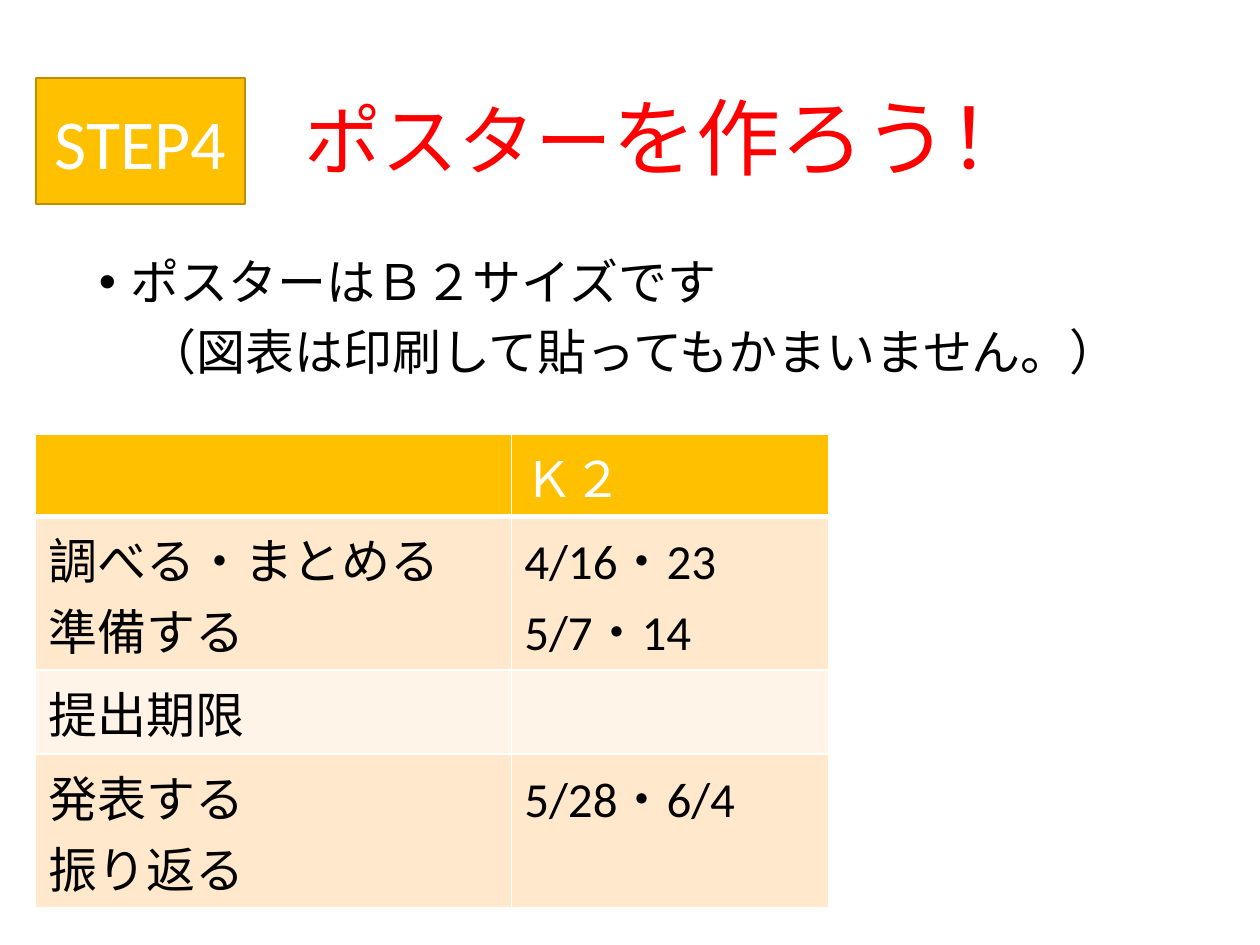
from lxml import etree
from pptx import Presentation
from pptx.dml.color import RGBColor
from pptx.enum.shapes import MSO_SHAPE
from pptx.enum.text import MSO_ANCHOR, PP_ALIGN
from pptx.oxml.ns import qn
from pptx.util import Pt

RECTANGLE = MSO_SHAPE.RECTANGLE
MIDDLE, TOP = MSO_ANCHOR.MIDDLE, MSO_ANCHOR.TOP
CENTER, LEFT = PP_ALIGN.CENTER, PP_ALIGN.LEFT
FONT = "Calibri"
COLORS = {
    "white": "FFFFFF", "black": "000000", "red": "FF0000", "gold": "FFC000",
    "gold_edge": "BD8E00", "band_dark": "FFE8CC", "band_light": "FFF4E7",
}
TITLE_FORMAT = {"alignment": CENTER, "line_spacing": 0.9}
BODY_FORMAT = {"alignment": LEFT, "line_spacing": 0.9, "space_before": Pt(10)}
SCHEDULE = [
    ("gold", "white", 47, ["", "Ｋ２"]),
    ("band_dark", "black", 88, ["調べる・まとめる\n準備する", "4/16・23\n5/7・14"]),
    ("band_light", "black", 48, ["提出期限", ""]),
    ("band_dark", "black", 88, ["発表する\n振り返る", "5/28・6/4"]),
]
COLUMN_WIDTHS = [272, 181]


def color(name):
    """Return the named colour."""
    return RGBColor.from_string(COLORS[name])


def set_attributes(target, values):
    """Set each attribute of target from a dict."""
    for name, value in values.items():
        setattr(target, name, value)


def paint(target, name):
    """Give a shape or cell a solid fill."""
    target.fill.solid()
    target.fill.fore_color.rgb = color(name)


def write_paragraphs(frame, paragraphs, values):
    """Write paragraphs, each a list of (text, size, colour) runs."""
    for index, runs in enumerate(paragraphs):
        paragraph = frame.add_paragraph() if index else frame.paragraphs[0]
        set_attributes(paragraph, values)
        for text, size, color_name in runs:
            run = paragraph.add_run()
            run.text = text
            set_attributes(run.font, {"name": FONT, "size": Pt(size)})
            run.font.color.rgb = color(color_name)


def add_text(slide, box, paragraphs, anchor, values):
    """Add a text box and return its text frame."""
    frame = slide.shapes.add_textbox(*map(Pt, box)).text_frame
    set_attributes(frame, {"word_wrap": True, "vertical_anchor": anchor})
    write_paragraphs(frame, paragraphs, values)
    return frame


def add_bullet(paragraph, indent):
    """Give a paragraph a round bullet with a hanging indent."""
    properties = paragraph._p.get_or_add_pPr()
    properties.set("marL", str(Pt(indent)))
    properties.set("indent", str(-Pt(indent)))
    etree.SubElement(properties, qn("a:buFont"), typeface="Arial")
    etree.SubElement(properties, qn("a:buChar"), char="•")


def add_badge(slide, box, text):
    """Add the filled step label."""
    shape = slide.shapes.add_shape(RECTANGLE, *map(Pt, box))
    shape.shadow.inherit = False
    paint(shape, "gold")
    shape.line.color.rgb = color("gold_edge")
    shape.line.width = Pt(1)
    shape.text_frame.vertical_anchor = MIDDLE
    write_paragraphs(shape.text_frame, [[(text, 40, "white")]], {"alignment": CENTER})


def add_borders(cell, bottom_width):
    """Draw white borders around a cell."""
    properties = cell._tc.get_or_add_tcPr()
    for side, width in {"L": 1, "R": 1, "T": 1, "B": bottom_width}.items():
        line = etree.SubElement(properties, qn(f"a:ln{side}"), w=str(Pt(width)))
        fill = etree.SubElement(line, qn("a:solidFill"))
        etree.SubElement(fill, qn("a:srgbClr"), val=COLORS["white"])


def add_schedule(slide, left, top):
    """Add the schedule table."""
    size = sum(COLUMN_WIDTHS), sum(row[2] for row in SCHEDULE)
    table = slide.shapes.add_table(
        len(SCHEDULE), len(COLUMN_WIDTHS), *map(Pt, (left, top, *size))).table
    for column, width in zip(table.columns, COLUMN_WIDTHS):
        column.width = Pt(width)
    for index, (fill, ink, row_height, texts) in enumerate(SCHEDULE):
        row = table.rows[index]
        row.height = Pt(row_height)
        for cell, text in zip(row.cells, texts):
            add_borders(cell, 1 if index else 3)
            paint(cell, fill)
            lines = [[(line, 28, ink)] for line in text.splitlines()]
            write_paragraphs(cell.text_frame, lines, {"alignment": LEFT})


def main():
    """Build the slide and save it."""
    presentation = Presentation()
    set_attributes(presentation, {"slide_width": Pt(720), "slide_height": Pt(540)})
    slide = presentation.slides.add_slide(presentation.slide_layouts[6])
    title = [[("　ポスター", 44, "red"), ("を作ろう！", 48, "red")]]
    add_text(slide, (49.5, 29, 621, 104.4), title, MIDDLE, TITLE_FORMAT)
    body = [[("ポスターはＢ２サイズです", 28, "black")],
            [("　（図表は印刷して貼ってもかまいません。）", 28, "black")]]
    frame = add_text(slide, (49.5, 144, 621, 81.4), body, TOP, BODY_FORMAT)
    add_bullet(frame.paragraphs[0], 18)
    add_badge(slide, (20.4, 44.8, 119.5, 72), "STEP4")
    add_schedule(slide, 20.4, 248)
    presentation.save("out.pptx")


if __name__ == "__main__":
    main()
